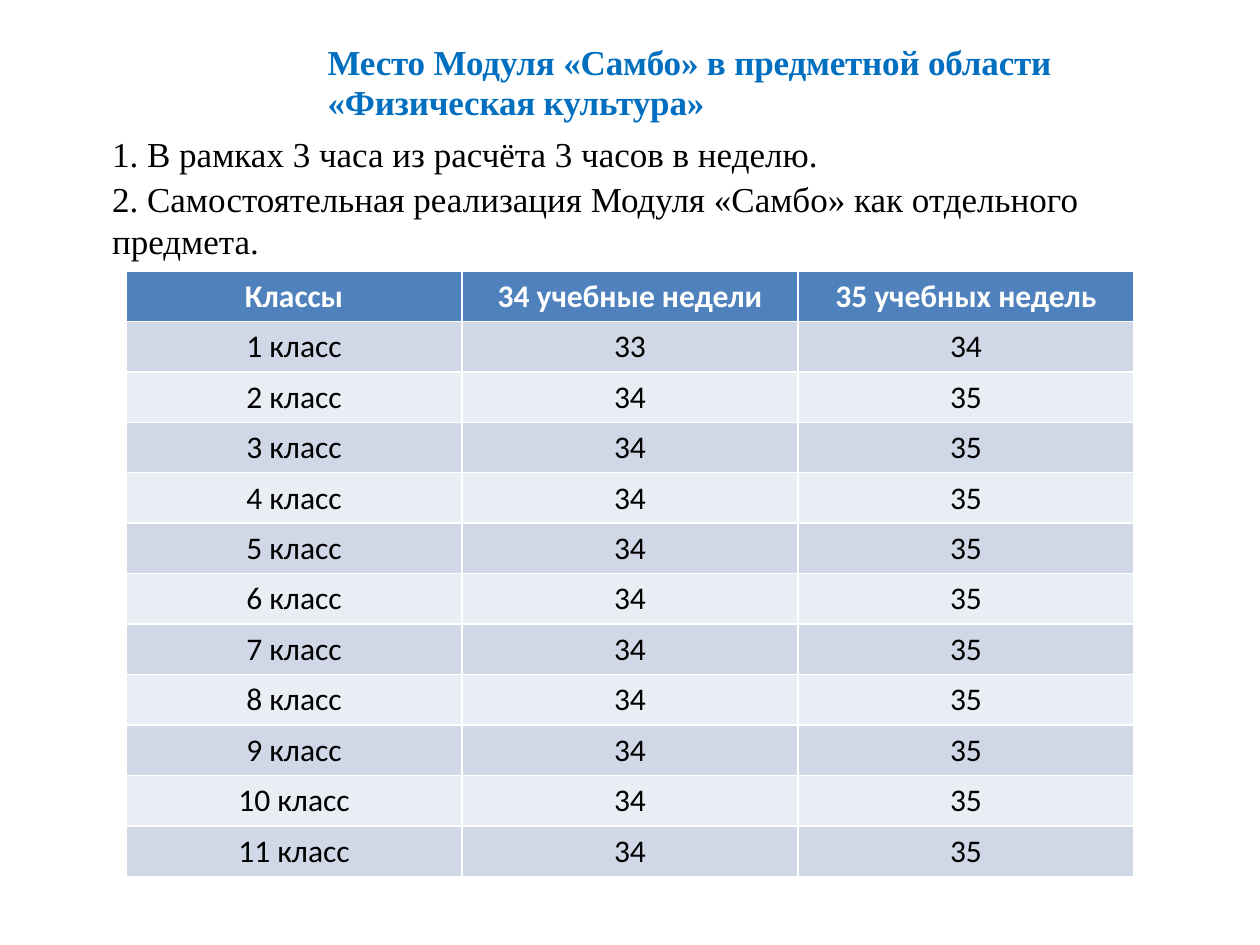
from dataclasses import dataclass

from pptx import Presentation
from pptx.dml.color import RGBColor
from pptx.enum import text
from pptx.util import Inches, Pt


@dataclass(frozen=True)
class Theme:
    heading: RGBColor = RGBColor(0x00, 0x6F, 0xC0)
    black: RGBColor = RGBColor(0x00, 0x00, 0x00)
    white: RGBColor = RGBColor(0xFF, 0xFF, 0xFF)
    header_fill: RGBColor = RGBColor(0x4F, 0x81, 0xBD)
    bands: tuple = (RGBColor(0xD0, 0xD8, 0xE8), RGBColor(0xE9, 0xED, 0xF4))
    intro_font: str = "Times New Roman"
    table_font: str = "Calibri"
    intro_size: Pt = Pt(20)
    tab_size: Pt = Pt(25.5)
    table_size: Pt = Pt(18)


theme = Theme()


def style_run(run, font, size, color, bold=False):
    run.font.name = font
    run.font.size = size
    run.font.color.rgb = color
    run.font.bold = bold


def indent(paragraph, left, first_line):
    """Set the left margin and the first-line offset of a paragraph."""
    properties = paragraph._p.get_or_add_pPr()
    properties.set("marL", str(Inches(left)))
    properties.set("indent", str(Inches(first_line)))


presentation = Presentation()
presentation.slide_width = Inches(10)
presentation.slide_height = Inches(7.5)
slide = presentation.slides.add_slide(presentation.slide_layouts[6])

# Heading and the two ways to run the module
intro = slide.shapes.add_textbox(Inches(0.33), Inches(0.33), Inches(8.84), Inches(1.76))
text_frame = intro.text_frame
text_frame.word_wrap = True
text_frame.auto_size = text.MSO_AUTO_SIZE.SHAPE_TO_FIT_TEXT
text_frame.margin_left = text_frame.margin_right = text_frame.margin_bottom = 0
text_frame.margin_top = Inches(0.01)

text_frame.text = "Место Модуля «Самбо» в предметной области «Физическая культура»"
heading = text_frame.paragraphs[0]
heading.line_spacing = Pt(22.8)
heading.space_before = Pt(1.1)
indent(heading, 2.27, 0)
heading_run = heading.runs[0]
style_run(heading_run, theme.intro_font, theme.intro_size, theme.heading, bold=True)
heading_run._r.get_or_add_rPr().set("spc", "-10")

options = [
    ("1. В рамках 3 часа из расчёта 3 часов в неделю.", theme.tab_size),
    ("2. Самостоятельная реализация Модуля «Самбо» как отдельного предмета.", theme.intro_size),
]
for option, tab_size in options:
    paragraph = text_frame.add_paragraph()
    paragraph.space_before = Pt(0.3)
    indent(paragraph, 0.56, -0.56)
    for words, size in (("\t", tab_size), (option, theme.intro_size)):
        run = paragraph.add_run()
        run.text = words
        style_run(run, theme.intro_font, size, theme.black)

# Hours per class; the default table style draws the white rules
rows = [("Классы", "34 учебные недели", "35 учебных недель"), ("1 класс", "33", "34")]
rows += [(f"{grade} класс", "34", "35") for grade in range(2, 12)]
table = slide.shapes.add_table(
    len(rows), 3, Inches(1), Inches(2.15), Inches(8), Inches(4.8)
).table
for row_index, values in enumerate(rows):
    is_header = row_index == 0
    fill = theme.header_fill if is_header else theme.bands[(row_index - 1) % 2]
    color = theme.white if is_header else theme.black
    for column_index, value in enumerate(values):
        cell = table.cell(row_index, column_index)
        cell.fill.solid()
        cell.fill.fore_color.rgb = fill
        cell.text_frame.text = value
        paragraph = cell.text_frame.paragraphs[0]
        paragraph.alignment = text.PP_ALIGN.CENTER
        style_run(paragraph.runs[0], theme.table_font, theme.table_size, color, is_header)

presentation.save("out.pptx")
